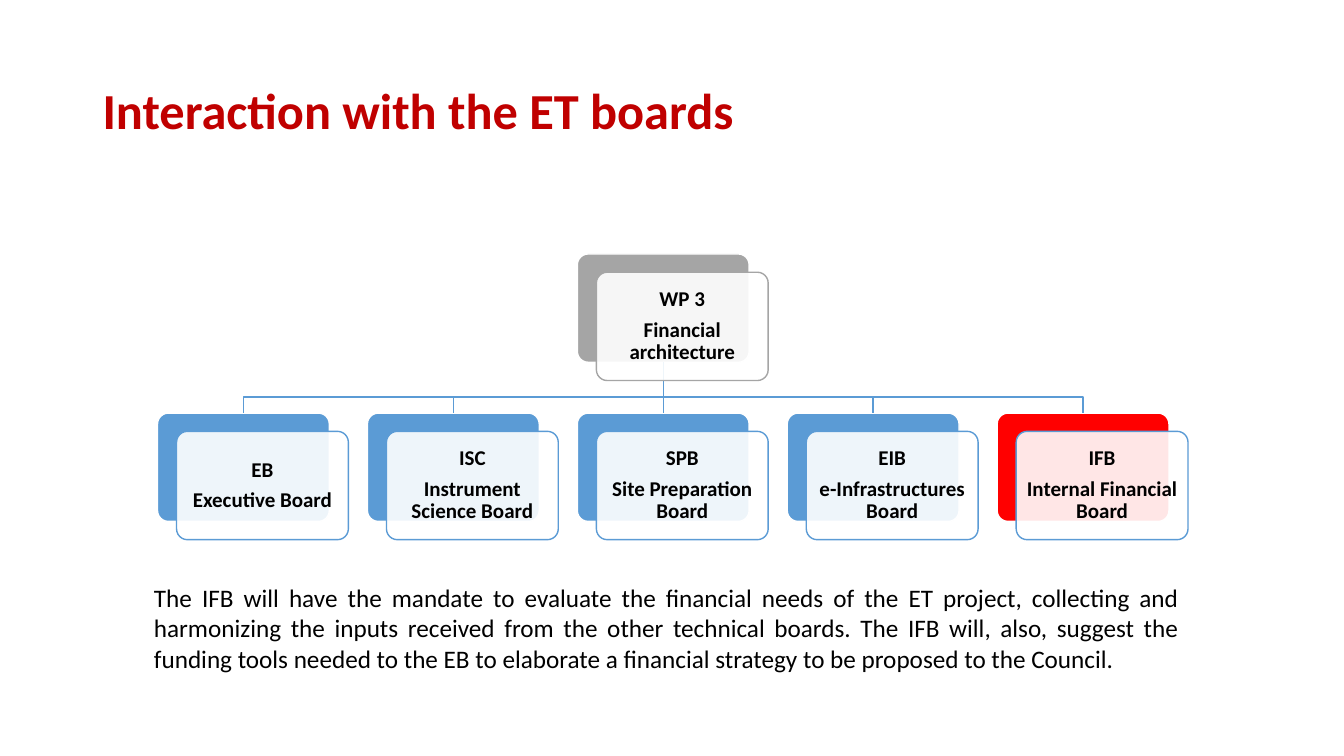
from lxml import etree
from pptx import Presentation
from pptx.dml.color import RGBColor
from pptx.enum.shapes import MSO_CONNECTOR, MSO_SHAPE
from pptx.enum.text import MSO_ANCHOR, PP_ALIGN
from pptx.oxml.ns import qn
from pptx.util import Cm, Pt

WHITE = RGBColor(0xFF, 0xFF, 0xFF)
BLACK = RGBColor(0x00, 0x00, 0x00)
DARK_RED = RGBColor(0xC0, 0x00, 0x00)
RED = RGBColor(0xFF, 0x00, 0x00)
GREY = RGBColor(0xA5, 0xA5, 0xA5)
BLUE = RGBColor(0x5B, 0x9B, 0xD5)

CARD_WIDTH, CARD_HEIGHT = 4.33, 2.73
SHIFT_X, SHIFT_Y = 0.48, 0.46
BOARDS_LEFT, BOARD_STEP = 3.97, 5.29
ROOT_TOP, BUS_TOP, BOARDS_TOP = 6.4, 10.0, 10.41

ROOT = ("WP 3", "Financial architecture")
BOARDS = [
    ("EB", "Executive Board", BLUE),
    ("ISC", "Instrument Science Board", BLUE),
    ("SPB", "Site Preparation Board", BLUE),
    ("EIB", "e-Infrastructures Board", BLUE),
    ("IFB", "Internal Financial Board", RED),
]
MANDATE = (
    "The IFB will have the mandate to evaluate the financial needs of the ET project, "
    "collecting and harmonizing the inputs received from the other technical boards. "
    "The IFB will, also, suggest the funding tools needed to the EB to elaborate a "
    "financial strategy to be proposed to the Council."
)


class BoardSlide:
    font_name = "Calibri"

    def __init__(self, presentation):
        self.slide = presentation.slides.add_slide(presentation.slide_layouts[5])
        self.shapes = self.slide.shapes

    def style(self, paragraph, size, color=BLACK, bold=False, align=PP_ALIGN.LEFT):
        font = paragraph.font
        font.name, font.size, font.bold = self.font_name, Pt(size), bold
        font.color.rgb = color
        paragraph.alignment = align

    def title(self, text, left, top, width, height):
        title = self.shapes.title
        title.left, title.top = Cm(left), Cm(top)
        title.width, title.height = Cm(width), Cm(height)
        frame = title.text_frame
        frame.text = text
        frame.vertical_anchor = MSO_ANCHOR.MIDDLE
        paragraph = frame.paragraphs[0]
        self.style(paragraph, 36, DARK_RED, bold=True)
        paragraph.line_spacing = 0.9

    def card(self, left, top, fill, line):
        card = self.shapes.add_shape(
            MSO_SHAPE.ROUNDED_RECTANGLE,
            Cm(left), Cm(top), Cm(CARD_WIDTH), Cm(CARD_HEIGHT),
        )
        card.adjustments[0] = 0.1
        card.shadow.inherit = False
        card.fill.solid()
        card.fill.fore_color.rgb = fill
        card.line.color.rgb = line
        card.line.width = Pt(1)
        return card

    def label_card(self, left, top, line, texts):
        card = self.card(left + SHIFT_X, top + SHIFT_Y, WHITE, line)
        color = card.fill._xPr.find(qn("a:solidFill"))[0]
        etree.SubElement(color, qn("a:alpha"), val="90000")
        frame = card.text_frame
        frame.word_wrap = True
        frame.vertical_anchor = MSO_ANCHOR.MIDDLE
        frame.margin_left = frame.margin_right = Cm(0.15)
        frame.margin_top = frame.margin_bottom = Cm(0.15)
        frame.text = "\n".join(texts)
        for paragraph in frame.paragraphs:
            self.style(paragraph, 15, bold=True, align=PP_ALIGN.CENTER)
            paragraph.line_spacing = 0.9
            paragraph.space_after = Pt(5.5)

    def straight_link(self, parent, child):
        link = self.shapes.add_connector(MSO_CONNECTOR.STRAIGHT, 0, 0, 0, 0)
        link.begin_connect(parent, 2)
        link.end_connect(child, 0)
        link.line.color.rgb = BLUE
        link.line.width = Pt(1)
        etree.SubElement(link._element.spPr, qn("a:effectLst"))

    def bent_link(self, parent, child):
        start = parent.left + parent.width // 2
        end = child.left + child.width // 2
        builder = self.shapes.build_freeform(start, parent.top + parent.height)
        builder.add_line_segments(
            [(start, Cm(BUS_TOP)), (end, Cm(BUS_TOP)), (end, child.top)], close=False
        )
        link = builder.convert_to_shape()
        link.shadow.inherit = False
        link.fill.background()
        link.line.color.rgb = BLUE
        link.line.width = Pt(1)

    def body(self, text, left, top, width, height):
        box = self.shapes.add_textbox(Cm(left), Cm(top), Cm(width), Cm(height))
        box.text_frame.word_wrap = True
        box.text_frame.text = text
        self.style(box.text_frame.paragraphs[0], 18, align=PP_ALIGN.JUSTIFY)


def main():
    presentation = Presentation()
    presentation.slide_width, presentation.slide_height = Cm(33.87), Cm(19.05)
    board_slide = BoardSlide(presentation)
    board_slide.title("Interaction with the ET boards", 2.33, 1.01, 29.21, 3.68)

    lefts = [BOARDS_LEFT + index * BOARD_STEP for index in range(len(BOARDS))]
    middle = len(BOARDS) // 2
    root = board_slide.card(lefts[middle], ROOT_TOP, GREY, WHITE)
    for index, (left, (_, _, color)) in enumerate(zip(lefts, BOARDS)):
        board = board_slide.card(left, BOARDS_TOP, color, WHITE)
        if index == middle:
            board_slide.straight_link(root, board)
        else:
            board_slide.bent_link(root, board)

    board_slide.label_card(lefts[middle], ROOT_TOP, GREY, ROOT)
    for left, (short_name, full_name, _) in zip(lefts, BOARDS):
        board_slide.label_card(left, BOARDS_TOP, BLUE, (short_name, full_name))

    board_slide.body(MANDATE, 3.63, 14.55, 26.34, 2.57)
    presentation.save("out.pptx")


if __name__ == "__main__":
    main()
